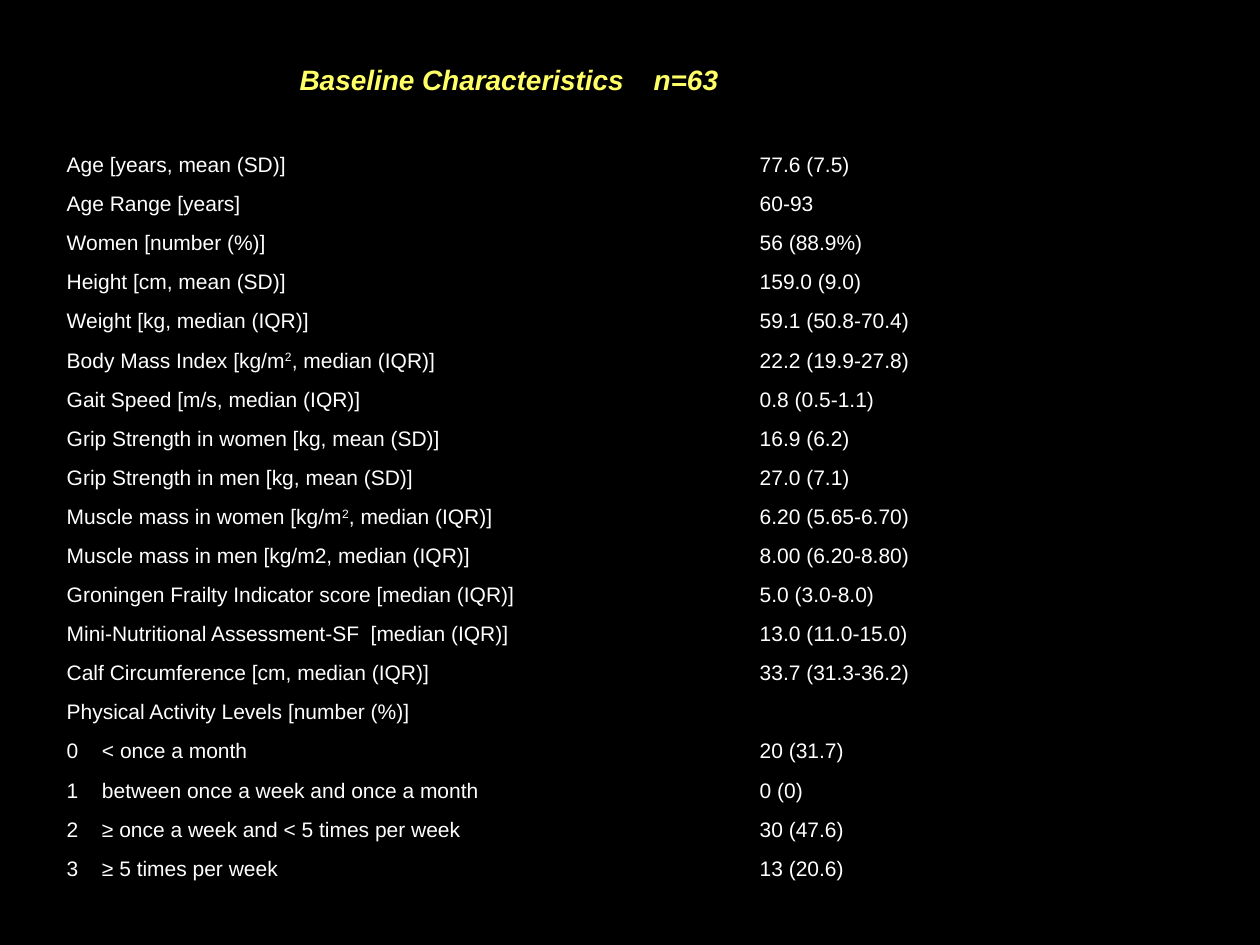
"""Build the baseline characteristics slide with its two-column table."""
from lxml import etree
from pptx import Presentation
from pptx.dml.color import RGBColor
from pptx.enum.text import MSO_ANCHOR
from pptx.oxml.ns import qn
from pptx.util import Inches, Pt

TOP = MSO_ANCHOR.TOP
BLANK_LAYOUT = 6
ROW_HEIGHT = 5.9 / 19
ROWS = [
    ("Age [years, mean (SD)]", "77.6 (7.5)"),
    ("Age Range [years]", "60-93"),
    ("Women [number (%)]", "56 (88.9%)"),
    ("Height [cm, mean (SD)]", "159.0 (9.0)"),
    ("Weight [kg, median (IQR)]", "59.1 (50.8-70.4)"),
    ("Body Mass Index [kg/m^2^, median (IQR)]", "22.2 (19.9-27.8)"),
    ("Gait Speed [m/s, median (IQR)]", "0.8 (0.5-1.1)"),
    ("Grip Strength in women [kg, mean (SD)]", "16.9 (6.2)"),
    ("Grip Strength in men [kg, mean (SD)]", "27.0 (7.1)"),
    ("Muscle mass in women [kg/m^2^, median (IQR)]", "6.20 (5.65-6.70)"),
    ("Muscle mass in men [kg/m2, median (IQR)]", "8.00 (6.20-8.80)"),
    ("Groningen Frailty Indicator score [median (IQR)]", "5.0 (3.0-8.0)"),
    ("Mini-Nutritional Assessment-SF  [median (IQR)]", "13.0 (11.0-15.0)"),
    ("Calf Circumference [cm, median (IQR)]", "33.7 (31.3-36.2)"),
    ("Physical Activity Levels [number (%)]", ""),
    ("0\t< once a month", "20 (31.7)"),
    ("1\tbetween once a week and once a month", "0 (0)"),
    ("2\t≥ once a week and < 5 times per week", "30 (47.6)"),
    ("3\t≥ 5 times per week", "13 (20.6)"),
]


def color(hex_string):
    return RGBColor.from_string(hex_string)


def write(paragraph, text, size, hex_string, tab_position):
    for index, piece in enumerate(text.split("^")):
        run = paragraph.add_run()
        run.text = piece
        run.font.name = "Arial"
        run.font.size = Pt(size)
        run.font.color.rgb = color(hex_string)
        if index % 2:
            run.font._element.set("baseline", "30000")
    if "\t" in text:
        properties = paragraph._p.get_or_add_pPr()
        tabs = etree.SubElement(properties, qn("a:tabLst"))
        etree.SubElement(tabs, qn("a:tab"), pos=str(Inches(tab_position)), algn="l")


presentation = Presentation()
presentation.slide_width = Inches(10)
presentation.slide_height = Inches(7.5)
slide = presentation.slides.add_slide(presentation.slide_layouts[BLANK_LAYOUT])
slide.background.fill.solid()
slide.background.fill.fore_color.rgb = color("000000")

table = slide.shapes.add_table(
    len(ROWS), 2, Inches(0.46), Inches(1.19), Inches(9.08), Inches(5.9)
).table
table.first_row = False
table.horz_banding = False
table.columns[0].width = Inches(5.5)
table.columns[1].width = Inches(3.58)

for row, texts in zip(table.rows, ROWS):
    row.height = Inches(ROW_HEIGHT)
    for cell, text in zip(row.cells, texts):
        cell.margin_left = cell.margin_right = Inches(0.07)
        cell.margin_top = cell.margin_bottom = 0
        cell.vertical_anchor = TOP
        cell_properties = cell._tc.get_or_add_tcPr()
        for side in ("lnL", "lnR", "lnT", "lnB"):
            border = etree.SubElement(cell_properties, qn(f"a:{side}"), w=str(Pt(1)))
            border_fill = etree.SubElement(border, qn("a:solidFill"))
            etree.SubElement(border_fill, qn("a:srgbClr"), val="000000")
        cell.fill.background()
        paragraph = cell.text_frame.paragraphs[0]
        paragraph.line_spacing = 1.15
        write(paragraph, text, 12, "FFFFFF", 0.28)

title = slide.shapes.add_textbox(Inches(2.28), Inches(0.45), Inches(4.4), Inches(0.37))
title.text_frame.word_wrap = True
title_paragraph = title.text_frame.paragraphs[0]
write(title_paragraph, "Baseline Characteristics\tn=63", 16, "FFFF66", 2.81)
for run in title_paragraph.runs:
    run.font.bold = True
    run.font.italic = True

presentation.save("out.pptx")
